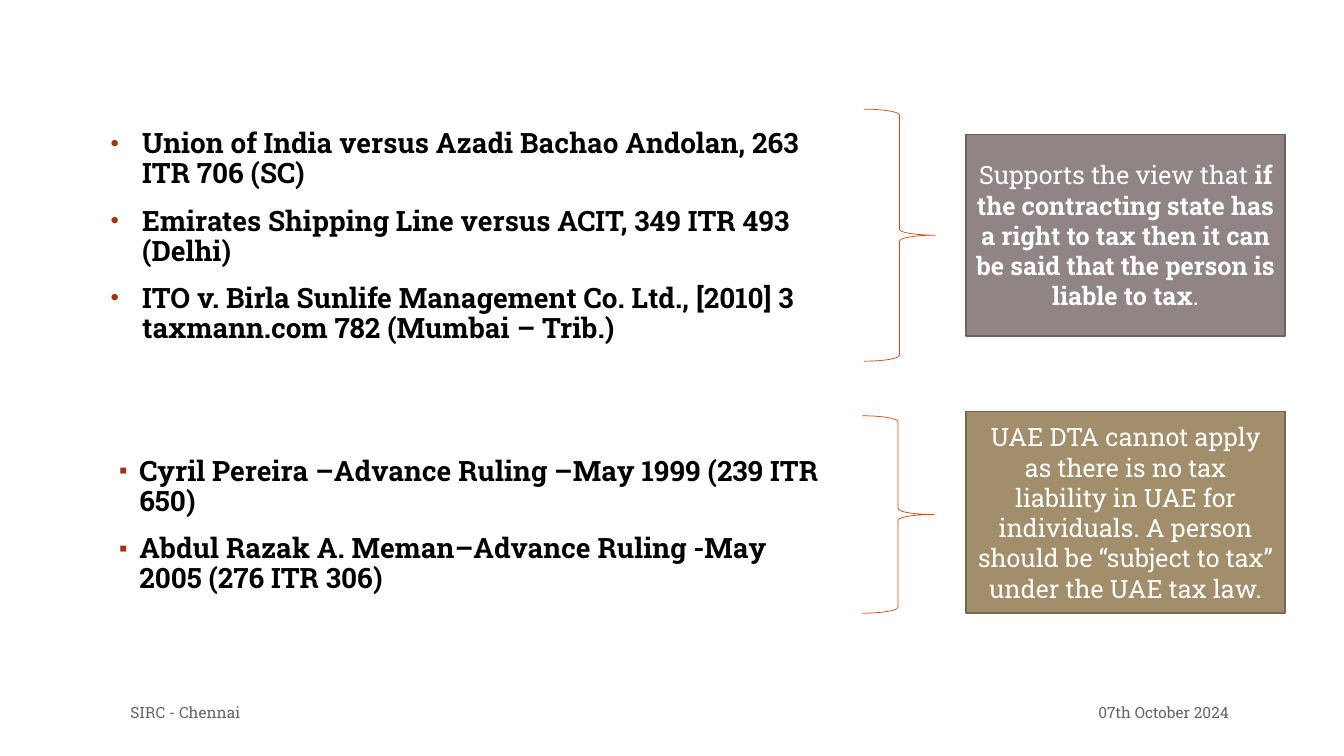
from lxml import etree
from pptx import Presentation
from pptx.dml.color import RGBColor as Rgb
from pptx.enum.shapes import MSO_SHAPE as Kind
from pptx.enum.text import MSO_ANCHOR as Anchor, PP_ALIGN as Align
from pptx.oxml.ns import qn
from pptx.util import Pt

FONT = "Roboto Slab"
CASES = [
    "Union of India versus Azadi Bachao Andolan, 263 ITR 706 (SC)",
    "Emirates Shipping Line versus ACIT, 349 ITR 493 (Delhi)",
    "ITO v. Birla Sunlife Management Co. Ltd., [2010] 3 taxmann.com 782 (Mumbai – Trib.)",
]
RULINGS = [
    "Cyril Pereira –Advance Ruling –May 1999 (239 ITR 650)",
    "Abdul Razak A. Meman–Advance Ruling -May 2005 (276 ITR 306)",
]
SUPPORT = [
    ("Supports the view that ", False),
    ("if the contracting state has a right to tax then it can be said "
     "that the person is liable to tax", True),
    (".", False),
]
DENIAL = [
    ("UAE DTA cannot apply as there is no tax liability in UAE for individuals. "
     "A person should be “subject to tax” under the UAE tax law.", False),
]


def color(code):
    return Rgb.from_string(code)


def style(run, size, code, bold=False):
    font = run.font
    font.name, font.size, font.bold = FONT, Pt(size), bold
    font.color.rgb = color(code)


def bullet(para, mark, indent):
    props = para._p.get_or_add_pPr()
    props.set("marL", str(Pt(indent)))
    props.set("indent", str(-Pt(indent)))
    tint = etree.SubElement(props, qn("a:buClr"))
    etree.SubElement(tint, qn("a:srgbClr"), val="9E3611")
    etree.SubElement(props, qn("a:buSzPct"), val="85000")
    etree.SubElement(props, qn("a:buFont"), typeface="Arial")
    etree.SubElement(props, qn("a:buChar"), char=mark)


def add_list(slide, box, items, mark, indent):
    frame = slide.shapes.add_textbox(*map(Pt, box)).text_frame
    frame.word_wrap = True
    frame.text = "\n".join(items)
    for index, para in enumerate(frame.paragraphs):
        para.line_spacing = 0.9
        para.space_before = Pt(12 if index else 0)
        bullet(para, mark, indent)
        style(para.runs[0], 20, "000000", True)


def add_shape(slide, kind, box, line, width):
    shape = slide.shapes.add_shape(kind, *map(Pt, box))
    shape.shadow.inherit = False
    shape.line.color.rgb = color(line)
    shape.line.width = Pt(width)
    return shape


def add_brace(slide, box):
    brace = add_shape(slide, Kind.RIGHT_BRACE, box, "D34817", 0.5)
    brace.fill.background()


def add_panel(slide, top, fill, line, parts):
    panel = add_shape(slide, Kind.RECTANGLE, (690, top, 228, 144), line, 1)
    panel.fill.solid()
    panel.fill.fore_color.rgb = color(fill)
    frame = panel.text_frame
    frame.word_wrap = True
    frame.vertical_anchor = Anchor.MIDDLE
    para = frame.paragraphs[0]
    para.alignment = Align.CENTER
    for text, bold in parts:
        run = para.add_run()
        run.text = text
        style(run, 18, "FFFFFF", bold)


def add_note(slide, left, width, text, align):
    frame = slide.shapes.add_textbox(Pt(left), Pt(494), Pt(width), Pt(29)).text_frame
    frame.word_wrap = True
    frame.vertical_anchor = Anchor.MIDDLE
    frame.text = text
    para = frame.paragraphs[0]
    para.alignment = align
    style(para.runs[0], 11, "696464")


def main():
    deck = Presentation()
    deck.slide_width, deck.slide_height = Pt(960), Pt(540)
    slide = deck.slides.add_slide(deck.slide_layouts[6])

    add_list(slide, (72, 89, 522, 199), CASES, "•", 22.5)
    add_list(slide, (78, 323, 516, 163), RULINGS, "▪", 14.4)
    add_brace(slide, (617, 78, 51, 180))
    add_brace(slide, (616, 297, 51, 141))
    add_panel(slide, 96, "918485", "6B6262", SUPPORT)
    add_panel(slide, 294, "A28E6A", "78694E", DENIAL)
    add_note(slide, 86, 498, "SIRC - Chennai", Align.LEFT)
    add_note(slide, 627, 258, "07th October 2024", Align.RIGHT)

    deck.save("out.pptx")


if __name__ == "__main__":
    main()
